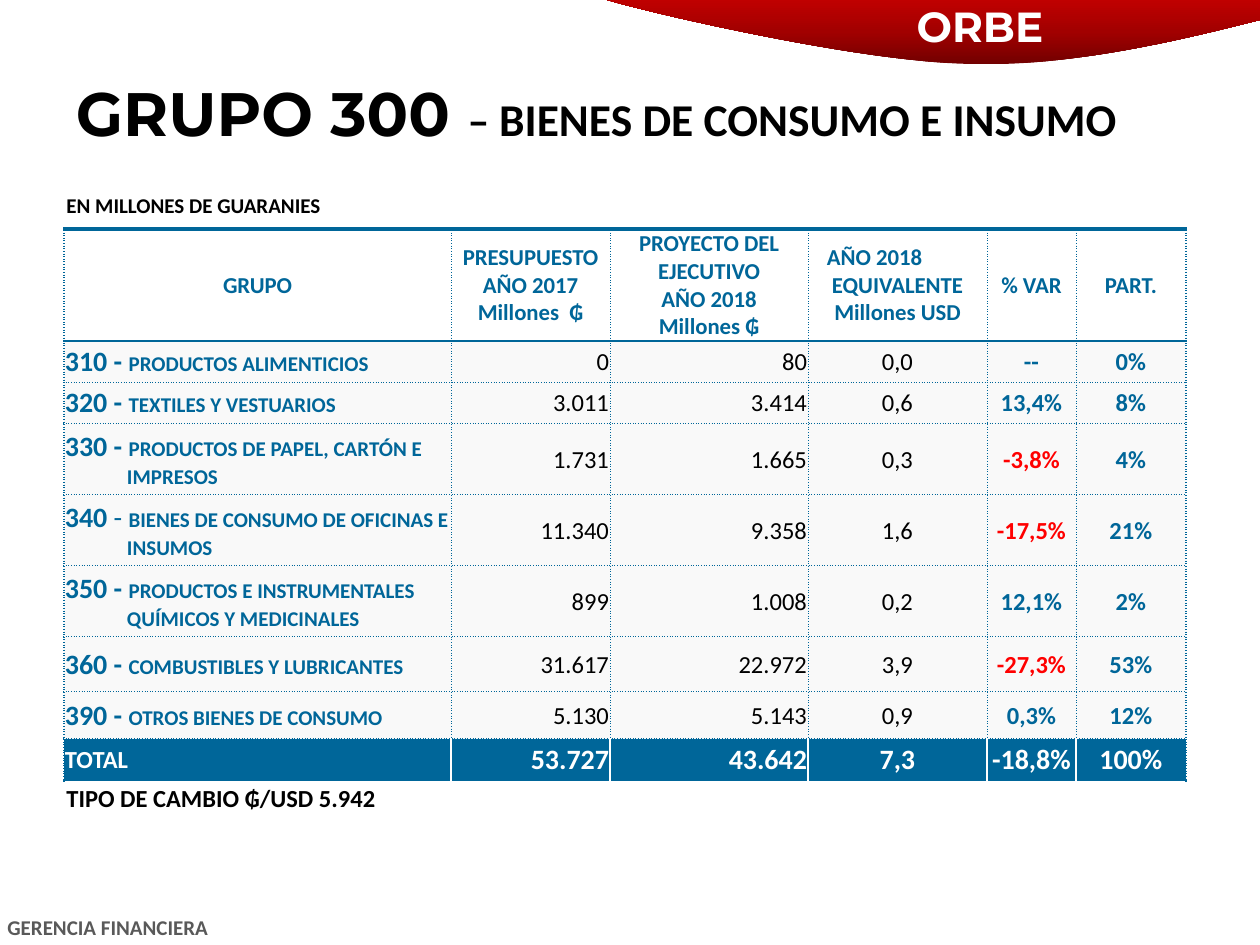
"""Build the budget slide for group 300, consumer goods and supplies."""
import copy
from dataclasses import dataclass

import lxml.etree
import pptx
import pptx.dml.color
import pptx.enum.dml
import pptx.enum.shapes
import pptx.enum.text
import pptx.oxml
import pptx.oxml.ns
import pptx.util

BLUE, RED, BLACK, WHITE = "006699", "FF0000", "000000", "FFFFFF"
PALE, GRAY = "F9F9F9", "595959"
ALIGN = pptx.enum.text.PP_ALIGN
COLUMNS = [387, 159, 198, 179, 89, 110]
ROWS = [110, 41, 42, 71, 71, 71, 55, 47, 42]
HEADINGS = [
    ["GRUPO"],
    ["PRESUPUESTO", "AÑO 2017", "Millones  ₲"],
    ["PROYECTO DEL EJECUTIVO", "AÑO 2018", "Millones ₲"],
    ["AÑO 2018", "EQUIVALENTE", "Millones USD"],
    ["% VAR"],
    ["PART."],
]
ALIGNMENTS = [ALIGN.LEFT, ALIGN.RIGHT, ALIGN.RIGHT, ALIGN.CENTER, ALIGN.CENTER, ALIGN.CENTER]


@dataclass
class Span:
    """A run of text with its look."""
    text: str
    size: int
    color: str = BLACK
    bold: bool = True
    font: str = "Calibri"


@dataclass
class Group:
    """A body row: expense code, name and figures."""
    code: str
    name: str
    values: list[str]
    bold_dash: bool = True


@dataclass
class Label:
    """A text box of one span."""
    box: tuple[int, int, int, int]
    span: Span
    align: ALIGN = ALIGN.LEFT


@dataclass
class Edge:
    """A cell border."""
    color: str = BLUE
    width: float = 0.5
    dash: str = "sysDot"


GROUPS = [
    Group("310", "PRODUCTOS ALIMENTICIOS", ["0", "80", "0,0", "--", "0%"]),
    Group("320", "TEXTILES Y VESTUARIOS", ["3.011", "3.414", "0,6", "13,4%", "8%"]),
    Group("330", "PRODUCTOS DE PAPEL, CARTÓN E IMPRESOS", ["1.731", "1.665", "0,3", "-3,8%", "4%"]),
    Group("340", "BIENES DE CONSUMO DE OFICINAS E INSUMOS",
          ["11.340", "9.358", "1,6", "-17,5%", "21%"], False),
    Group("350", "PRODUCTOS E INSTRUMENTALES QUÍMICOS Y MEDICINALES",
          ["899", "1.008", "0,2", "12,1%", "2%"]),
    Group("360", "COMBUSTIBLES Y LUBRICANTES", ["31.617", "22.972", "3,9", "-27,3%", "53%"]),
    Group("390", "OTROS BIENES DE CONSUMO", ["5.130", "5.143", "0,9", "0,3%", "12%"]),
]
TOTALS = ["TOTAL", "53.727", "43.642", "7,3", "-18,8%", "100%"]
LABELS = [
    Label((898, -6, 164, 63), Span("ORBE", 24, WHITE, font="Montserrat"), ALIGN.CENTER),
    Label((-5, 908, 436, 38), Span("GERENCIA FINANCIERA", 12, GRAY)),
    Label((54, 186, 331, 38), Span("EN MILLONES DE GUARANIES", 12)),
    Label((54, 777, 367, 43), Span("TIPO DE CAMBIO ₲/USD 5.942", 14)),
]


def px(value: float) -> pptx.util.Emu:
    """Turn px into EMU."""
    return pptx.util.Emu(round(value * 914400 / 126))


def rgb(color: str) -> pptx.dml.color.RGBColor:
    """Read a hex colour."""
    return pptx.dml.color.RGBColor.from_string(color)


def write(para, spans: list[Span], align: ALIGN, margin: int = 0, indent: int = 0) -> None:
    """Fill a paragraph with formatted spans."""
    para.alignment = align
    properties = para._p.get_or_add_pPr()
    properties.set("marL", str(px(margin)))
    properties.set("indent", str(px(indent)))
    for span in spans:
        run = para.add_run()
        run.text = span.text
        run.font.name = span.font
        run.font.size = pptx.util.Pt(span.size)
        run.font.bold = span.bold
        run.font.color.rgb = rgb(span.color)


def draw_banner(page) -> None:
    """Draw the curved red banner in the top corner."""
    curves = [((604, -1), (641, 11), (859, 62), (969, 64)),
              ((969, 64), (1079, 68), (1211, 32), (1260, 20))]
    steps = 30
    points = [
        tuple(a * (1 - t) ** 3 + 3 * b * t * (1 - t) ** 2 + 3 * c * t * t * (1 - t) + d * t ** 3
              for a, b, c, d in zip(*curve))
        for curve in curves for t in (step / steps for step in range(1, steps + 1))
    ]
    builder = page.shapes.build_freeform(px(604), px(-1), scale=1.0)
    builder.add_line_segments([(px(x), px(y)) for x, y in points + [(1260, 0)]], close=True)
    banner = builder.convert_to_shape()
    banner.shadow.inherit = False
    banner.line.fill.background()
    banner.fill.gradient()
    banner.fill.gradient_angle = 90
    first = banner.fill.gradient_stops[0]._gs
    first.addnext(copy.deepcopy(first))
    stops = [(0, "720000"), (0.5, "A20000"), (1, "C00000")]
    for stop, (position, color) in zip(banner.fill.gradient_stops, stops):
        stop.position = position
        stop.color.rgb = rgb(color)


def draw_label(page, label: Label) -> None:
    """Draw a text box."""
    box = page.shapes.add_textbox(*map(px, label.box))
    box.text_frame.word_wrap = True
    box.text_frame.auto_size = pptx.enum.text.MSO_AUTO_SIZE.SHAPE_TO_FIT_TEXT
    write(box.text_frame.paragraphs[0], [label.span], label.align)


def draw_title(page) -> None:
    """Place and format the title."""
    title = page.shapes.title
    title.left, title.top, title.width, title.height = map(px, (45, 112, 1171, 43))
    frame = title.text_frame
    frame.word_wrap = True
    frame.auto_size = pptx.enum.text.MSO_AUTO_SIZE.NONE
    frame.vertical_anchor = pptx.enum.text.MSO_ANCHOR.BOTTOM
    frame.margin_left = frame.margin_right = frame.margin_top = frame.margin_bottom = px(6)
    spans = [Span("GRUPO 300 ", 35, font="Montserrat"), Span("– ", 25),
             Span("BIENES DE CONSUMO E INSUMO", 26)]
    write(frame.paragraphs[0], spans, ALIGN.LEFT, indent=25)


def set_borders(cell, row: int, column: int) -> None:
    """Set the four borders of a cell by its place in the table."""
    last_row, last_column = len(ROWS) - 1, len(COLUMNS) - 1
    outer, rule = Edge(width=1), Edge(width=1, dash="solid")
    inner = Edge(WHITE, 1, "solid") if row == last_row else Edge()
    edges = {
        "L": outer if column == 0 else inner,
        "R": outer if column == last_column else inner,
        "T": Edge(width=2.25, dash="solid") if row == 0 else rule if row == 1 else Edge(),
        "B": rule if row in (0, last_row) else Edge(),
    }
    properties = cell._tc.get_or_add_tcPr()
    for place, (side, edge) in enumerate(edges.items()):
        properties.insert(place, pptx.oxml.parse_xml(
            f'<a:ln{side} {pptx.oxml.ns.nsdecls("a")} w="{pptx.util.Pt(edge.width)}">'
            f'<a:solidFill><a:srgbClr val="{edge.color}"/></a:solidFill>'
            f'<a:prstDash val="{edge.dash}"/></a:ln{side}>'))


def fill_cell(cell, row: int, column: int) -> None:
    """Write the text of a cell."""
    paras = cell.text_frame
    if row == 0:
        for number, line in enumerate(HEADINGS[column]):
            para = paras.add_paragraph() if number else paras.paragraphs[0]
            shifted = column == 3 and number == 0
            write(para, [Span(line, 13, BLUE)], ALIGN.LEFT if shifted else ALIGN.CENTER,
                  margin=18 if shifted else 0)
        return
    para, align = paras.paragraphs[0], ALIGNMENTS[column]
    if row == len(ROWS) - 1:
        write(para, [Span(TOTALS[column], 16 if column else 14, WHITE)], align)
        return
    group = GROUPS[row - 1]
    if column == 0:
        spans = [Span(group.code + " ", 16, BLUE), Span("- ", 16, BLUE, group.bold_dash),
                 Span(group.name, 12, BLUE)]
        write(para, spans, align, margin=62, indent=-62)
        return
    value, percent = group.values[column - 1], column > 3
    negative = value.startswith("-") and value.endswith("%")
    color = RED if negative else BLUE if percent else BLACK
    write(para, [Span(value, 14, color, percent)], align)


def draw_table(page) -> None:
    """Draw the budget table."""
    frame = page.shapes.add_table(len(ROWS), len(COLUMNS), px(64), px(229),
                                  px(sum(COLUMNS)), px(sum(ROWS)))
    table = frame.table
    table.first_row = table.horz_banding = False
    for column, width in zip(table.columns, COLUMNS):
        column.width = px(width)
    for row, height in enumerate(ROWS):
        table.rows[row].height = px(height)
        for column in range(len(COLUMNS)):
            cell = table.cell(row, column)
            cell.margin_left = cell.margin_right = cell.margin_top = px(1)
            cell.margin_bottom = 0
            cell.vertical_anchor = pptx.enum.text.MSO_ANCHOR.MIDDLE
            if row == 0:
                cell.fill.background()
            else:
                cell.fill.solid()
                cell.fill.fore_color.rgb = rgb(BLUE if row == len(ROWS) - 1 else PALE)
            set_borders(cell, row, column)
            fill_cell(cell, row, column)


def main() -> None:
    """Build and save the deck."""
    deck = pptx.Presentation()
    deck.slide_width, deck.slide_height = px(1260), px(945)
    page = deck.slides.add_slide(deck.slide_layouts[5])
    draw_banner(page)
    draw_title(page)
    draw_table(page)
    for label in LABELS:
        draw_label(page, label)
    deck.save("out.pptx")


if __name__ == "__main__":
    main()
